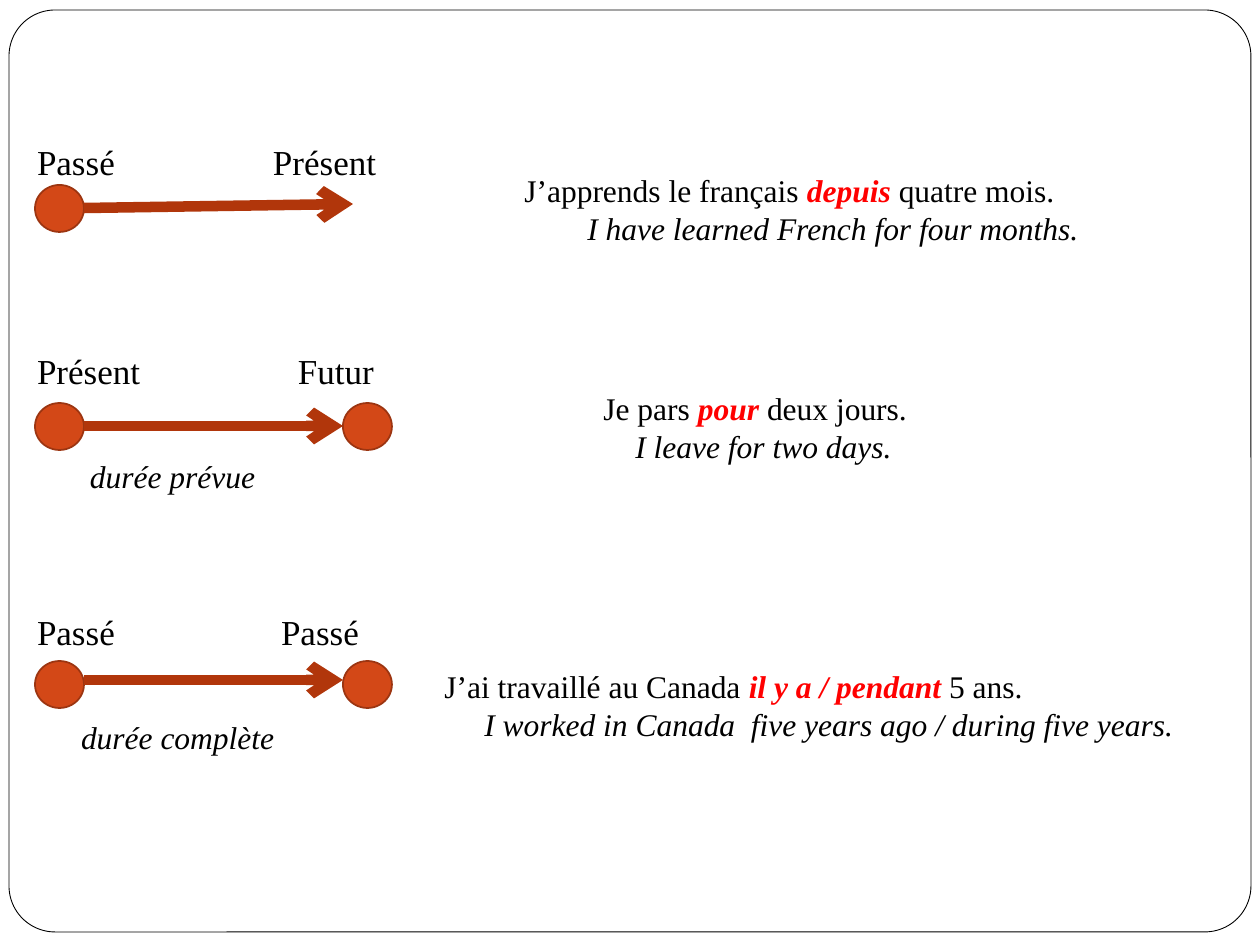
"""Build a slide showing French time expressions as three small timelines."""
import pptx
import pptx.dml.color
import pptx.enum.shapes
import pptx.oxml
import pptx.oxml.ns
import pptx.util

SCALE = 914400 / 126
FONT = "Times New Roman"
COLORS = {"text": "000000", "accent": "FF0000", "paper": "FFFFFF",
          "dot": "D34817", "dot_line": "9C3511", "arrow": "B1360B"}
LABEL_LEFT, DOT_LEFT, END_DOT_LEFT = 37, 35, 343
DOT_WIDTH, DOT_HEIGHT = 49, 47

TIMELINES = [
    {"labels": ("Passé", "Présent"), "label_top": 141, "end_label_left": 273,
     "dot_top": 185, "arrow": (208, 353, 204), "end_dot": False, "caption": None,
     "sentence": ("J’apprends le français ", "depuis ", "quatre mois."),
     "translation": "I have learned French for four months.",
     "box": (512, 165, 639), "indent": 63},
    {"labels": ("Présent", "Futur"), "label_top": 350, "end_label_left": 298,
     "dot_top": 403, "arrow": (426, 343, 426), "end_dot": True,
     "caption": ("durée prévue", 90, 457),
     "sentence": ("Je pars ", "pour ", "deux jours."),
     "translation": "I leave for two days.",
     "box": (591, 383, 382), "indent": 32},
    {"labels": ("Passé", "Passé"), "label_top": 611, "end_label_left": 281,
     "dot_top": 661, "arrow": (680, 343, 680), "end_dot": True,
     "caption": ("durée complète", 81, 718),
     "sentence": ("J’ai travaillé au Canada ", "il y a / pendant ", "5 ans."),
     "translation": "I worked in Canada  five years ago / during five years.",
     "box": (432, 661, 828), "indent": 40},
]


def px(value):
    return pptx.util.Emu(round(value * SCALE))


def rgb(name):
    return pptx.dml.color.RGBColor.from_string(COLORS[name])


def add_shape(slide, kind, box, fill, line, width):
    shape = slide.shapes.add_shape(kind, *map(px, box))
    shape.shadow.inherit = False
    shape.fill.solid()
    shape.fill.fore_color.rgb = rgb(fill)
    shape.line.color.rgb = rgb(line)
    shape.line.width = pptx.util.Pt(width)
    return shape


def add_dot(slide, left, top):
    add_shape(slide, pptx.enum.shapes.MSO_SHAPE.OVAL,
              (left, top, DOT_WIDTH, DOT_HEIGHT), "dot", "dot_line", 1)


def add_arrow(slide, start_y, end_x, end_y):
    points = (DOT_LEFT + DOT_WIDTH, start_y, end_x, end_y)
    arrow = slide.shapes.add_connector(
        pptx.enum.shapes.MSO_CONNECTOR.STRAIGHT, *map(px, points))
    arrow.line.color.rgb = rgb("arrow")
    arrow.line.width = pptx.util.Pt(6)
    head = pptx.oxml.parse_xml(
        f'<a:tailEnd {pptx.oxml.ns.nsdecls("a")} type="arrow"/>')
    arrow.line._get_or_add_ln().append(head)
    arrow._element.spPr.append(
        pptx.oxml.parse_xml(f'<a:effectLst {pptx.oxml.ns.nsdecls("a")}/>'))


def add_run(paragraph, text, size, color="text", bold=False, italic=False):
    run = paragraph.add_run()
    run.text = text
    run.font.name = FONT
    run.font.size = pptx.util.Pt(size)
    run.font.bold = bold
    run.font.italic = italic
    run.font.color.rgb = rgb(color)


def add_label(slide, text, left, top, size=20, italic=False):
    label = slide.shapes.add_textbox(*map(px, (left, top, 220, 40)))
    frame = label.text_frame
    frame.margin_left = frame.margin_right = 0
    frame.margin_top = frame.margin_bottom = 0
    add_run(frame.paragraphs[0], text, size, italic=italic)


def add_example(slide, timeline):
    left, top, width = timeline["box"]
    example = slide.shapes.add_textbox(*map(px, (left, top, width, 89)))
    sentence = example.text_frame.paragraphs[0]
    before, keyword, after = timeline["sentence"]
    add_run(sentence, before, 18)
    add_run(sentence, keyword, 18, "accent", bold=True, italic=True)
    add_run(sentence, after, 18)
    translation = example.text_frame.add_paragraph()
    translation._p.get_or_add_pPr().set("marL", str(px(timeline["indent"])))
    add_run(translation, timeline["translation"], 18, italic=True)


def add_timeline(slide, timeline):
    start, end = timeline["labels"]
    add_label(slide, start, LABEL_LEFT, timeline["label_top"])
    add_label(slide, end, timeline["end_label_left"], timeline["label_top"])
    add_dot(slide, DOT_LEFT, timeline["dot_top"])
    if timeline["end_dot"]:
        add_dot(slide, END_DOT_LEFT, timeline["dot_top"])
    add_arrow(slide, *timeline["arrow"])
    if timeline["caption"]:
        add_label(slide, *timeline["caption"], size=18, italic=True)
    add_example(slide, timeline)


def main():
    presentation = pptx.Presentation()
    presentation.slide_width, presentation.slide_height = px(1260), px(945)
    slide = presentation.slides.add_slide(presentation.slide_layouts[6])
    frame = add_shape(slide, pptx.enum.shapes.MSO_SHAPE.ROUNDED_RECTANGLE,
                      (9, 10, 1242, 922), "paper", "text", 0.5)
    frame.adjustments[0] = 0.05
    for timeline in TIMELINES:
        add_timeline(slide, timeline)
    presentation.save("out.pptx")


if __name__ == "__main__":
    main()
